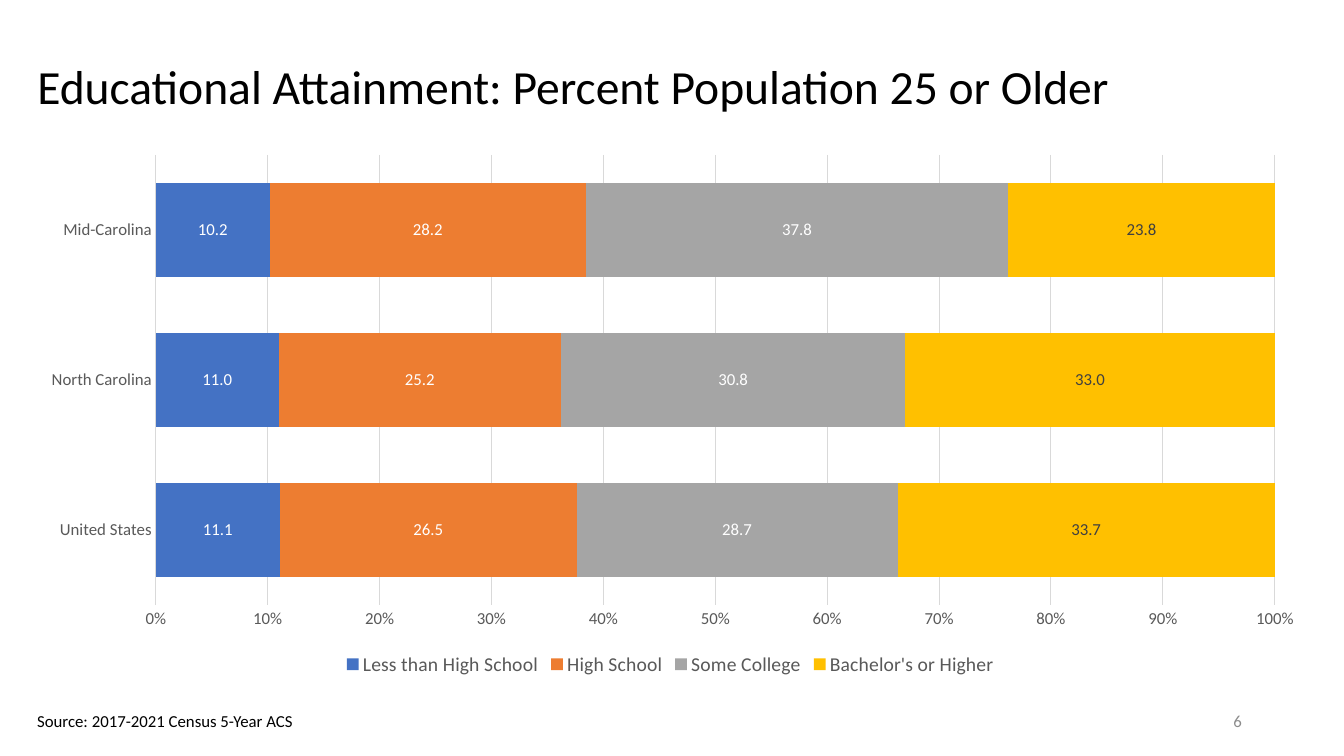
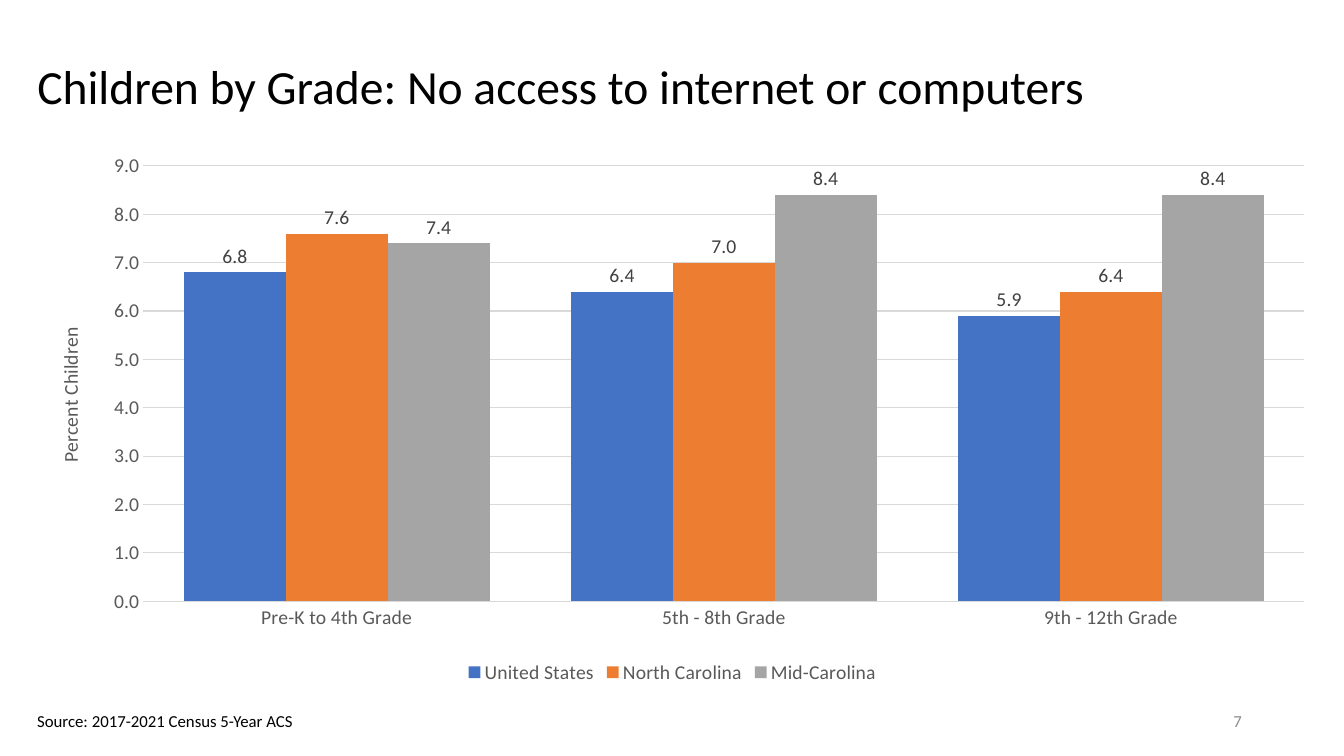
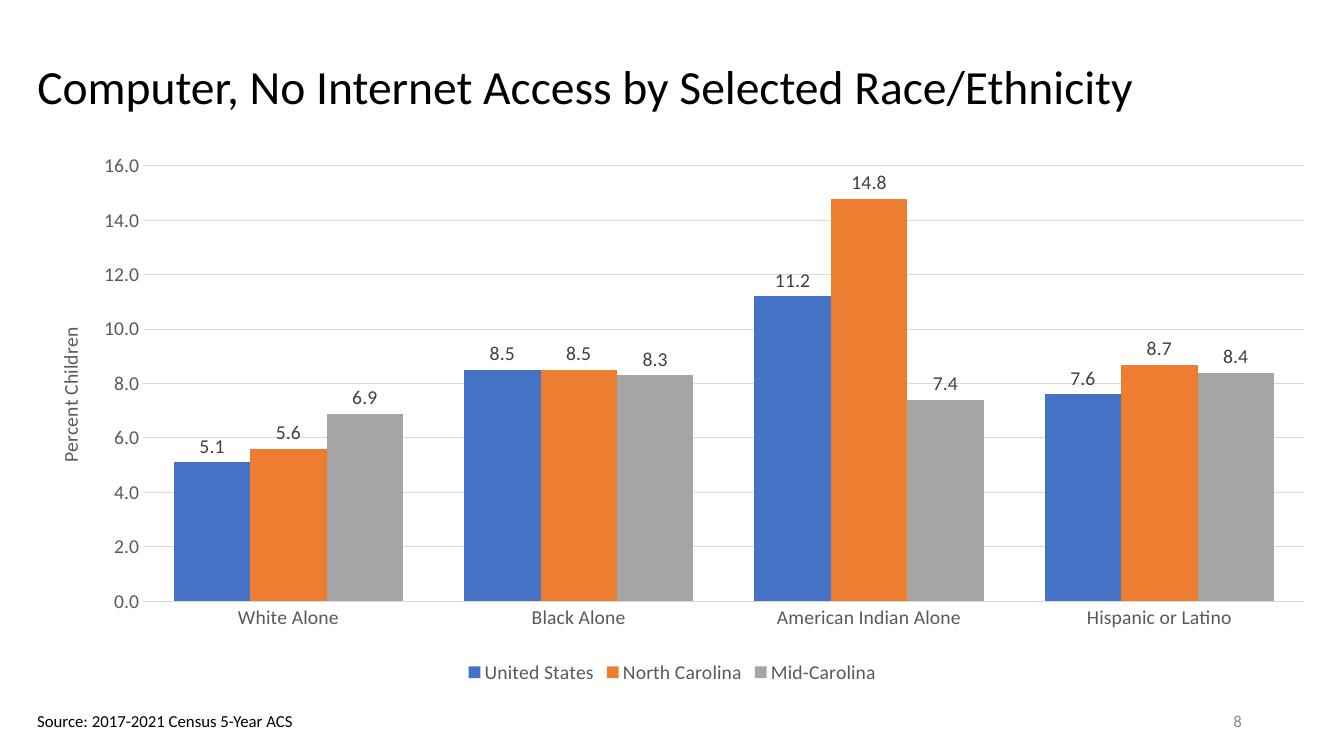
from lxml import etree
from pptx import Presentation
from pptx.chart import data as chart_data
from pptx.dml import color
from pptx.enum import chart as kinds, text
from pptx.oxml import ns
from pptx.util import Pt

FONT = "Calibri"
BLACK, GREY, DARK, PALE = "000000", "595959", "404040", "8C8C8C"
RULE, WHITE = "D9D9D9", "FFFFFF"
SERIES_COLOURS = ["4472C4", "ED7D31", "A5A5A5", "FFC000"]
DECIMAL = "#,##0.0"
REGIONS = ["United States", "North Carolina", "Mid-Carolina"]
SOURCE = "Source: 2017-2021 Census 5-Year ACS"
FIRST_NUMBER = 6

# Boxes: left, top, width, height in points
LEFT = 19.44
TITLE_BOX = (LEFT, 24.48, 918.72, 78.48)
BAR_BOX = (LEFT, 102.96, 918.72, 383.04)
COLUMN_BOX = (LEFT, 102.96, 921.6, 388.8)
SOURCE_BOX = (LEFT, 504, 200, 21.6)
NUMBER_BOX = (678.24, 500.4, 216, 28.8)


def rgb(value):
    return color.RGBColor.from_string(value)


def apply(target, **values):
    for name, value in values.items():
        setattr(target, name, value)


def style_font(font, size, colour):
    apply(font, name=FONT, size=Pt(size), bold=False)
    font.color.rgb = rgb(colour)


def style_line(line, colour):
    line.width = Pt(0.75)
    line.color.rgb = rgb(colour)


def set_layout(parent, index, **fractions):
    """Fix the place of a chart part, as fractions of the chart."""
    for old in parent.findall(ns.qn("c:layout")):
        parent.remove(old)
    layout = etree.Element(ns.qn("c:layout"))
    manual = etree.SubElement(layout, ns.qn("c:manualLayout"))
    for name, value in fractions.items():
        etree.SubElement(manual, ns.qn("c:" + name)).set("val", str(value))
    parent.insert(index, layout)


# Shared parts of every page
def add_title(page, box, words):
    title = page.shapes.title
    apply(title, **dict(zip(("left", "top", "width", "height"), map(Pt, box))))
    frame = title.text_frame
    apply(frame, text=words, word_wrap=True, auto_size=text.MSO_AUTO_SIZE.NONE,
          vertical_anchor=text.MSO_ANCHOR.MIDDLE)
    para = frame.paragraphs[0]
    apply(para, alignment=text.PP_ALIGN.LEFT, line_spacing=0.9)
    style_font(para.runs[0].font, 34, BLACK)


def add_note(page, box, words, colour, align, anchor, wrap):
    frame = page.shapes.add_textbox(*map(Pt, box)).text_frame
    apply(frame, text=words, word_wrap=wrap, vertical_anchor=anchor)
    para = frame.paragraphs[0]
    para.alignment = align
    style_font(para.runs[0].font, 12, colour)


def add_page(deck, words):
    page = deck.slides.add_slide(deck.slide_layouts[5])
    add_title(page, TITLE_BOX, words)
    number = FIRST_NUMBER + len(deck.slides) - 1
    add_note(page, NUMBER_BOX, str(number), PALE, text.PP_ALIGN.RIGHT,
             text.MSO_ANCHOR.MIDDLE, True)
    add_note(page, SOURCE_BOX, SOURCE, BLACK, text.PP_ALIGN.LEFT,
             text.MSO_ANCHOR.TOP, False)
    return page


# Charts
def add_chart(page, box, kind, categories, series, size, gap, label_place,
              label_colours, plot_area):
    data = chart_data.CategoryChartData(number_format=DECIMAL)
    data.categories = categories
    for name, values in series.items():
        data.add_series(name, values)
    chart = page.shapes.add_chart(kind, *map(Pt, box), data).chart
    apply(chart, has_title=False, has_legend=True)
    style_font(chart.font, size, BLACK)
    apply(chart.legend, position=kinds.XL_LEGEND_POSITION.BOTTOM,
          include_in_layout=False)
    style_font(chart.legend.font, 14, GREY)

    for axis in (chart.category_axis, chart.value_axis):
        apply(axis, major_tick_mark=kinds.XL_TICK_MARK.NONE,
              minor_tick_mark=kinds.XL_TICK_MARK.NONE)
        style_font(axis.tick_labels.font, size, GREY)
    style_line(chart.category_axis.format.line, RULE)
    chart.value_axis.format.line.fill.background()
    style_line(chart.value_axis.major_gridlines.format.line, RULE)

    plot = chart.plots[0]
    apply(plot, gap_width=gap, vary_by_categories=False)
    for item, fill, colour in zip(plot.series, SERIES_COLOURS, label_colours):
        item.format.fill.solid()
        item.format.fill.fore_color.rgb = rgb(fill)
        labels = item.data_labels
        apply(labels, show_value=True, number_format=DECIMAL,
              number_format_is_linked=False, position=label_place)
        style_font(labels.font, size, colour)

    set_layout(chart.element.find(".//" + ns.qn("c:plotArea")), 0,
               layoutTarget="inner", xMode="edge", yMode="edge",
               **dict(zip("xywh", plot_area)))
    return chart


def add_share_chart(page, box, categories, series):
    chart = add_chart(page, box, kinds.XL_CHART_TYPE.BAR_STACKED_100,
                      categories, series, 12, 60,
                      kinds.XL_LABEL_POSITION.CENTER,
                      [WHITE, WHITE, WHITE, DARK], (0.1, 0.02, 0.87, 0.84))
    apply(chart.value_axis.tick_labels, number_format="0%",
          number_format_is_linked=False)


def add_region_chart(page, box, categories, rows, top, step):
    chart = add_chart(page, box, kinds.XL_CHART_TYPE.COLUMN_CLUSTERED,
                      categories, dict(zip(REGIONS, rows)), 14, 80,
                      kinds.XL_LABEL_POSITION.OUTSIDE_END,
                      [DARK] * len(REGIONS), (0.09, 0.04, 0.9, 0.8))
    axis = chart.value_axis
    apply(axis, minimum_scale=0, maximum_scale=top, major_unit=step)
    apply(axis.tick_labels, number_format=DECIMAL,
          number_format_is_linked=False)
    # Upright axis title
    title = axis.axis_title
    title.text_frame.text = "Percent Children"
    style_font(title.text_frame.paragraphs[0].runs[0].font, 14, GREY)
    body = title.element.find(".//" + ns.qn("a:bodyPr"))
    body.set("rot", "-5400000")
    body.set("vert", "horz")
    set_layout(title.element, 1, xMode="edge", yMode="edge", x=0.02, y=0.33)


def main():
    deck = Presentation()
    apply(deck, slide_width=Pt(960), slide_height=Pt(540))

    page = add_page(deck, "Educational Attainment: Percent Population 25 or Older")
    add_share_chart(page, BAR_BOX, REGIONS, {
        "Less than High School": (11.1, 11, 10.2),
        "High School": (26.5, 25.2, 28.2),
        "Some College": (28.7, 30.8, 37.8),
        "Bachelor's or Higher": (33.7, 33, 23.8),
    })

    page = add_page(deck, "Children by Grade: No access to internet or computers")
    add_region_chart(
        page, COLUMN_BOX,
        ["Pre-K to 4th Grade", "5th - 8th Grade", "9th - 12th Grade"],
        [(6.8, 6.4, 5.9), (7.6, 7, 6.4), (7.4, 8.4, 8.4)], 9, 1)

    page = add_page(deck, "Computer, No Internet Access by Selected Race/Ethnicity")
    add_region_chart(
        page, COLUMN_BOX,
        ["White Alone", "Black Alone", "American Indian Alone",
         "Hispanic or Latino"],
        [(5.1, 8.5, 11.2, 7.6), (5.6, 8.5, 14.8, 8.7), (6.9, 8.3, 7.4, 8.4)],
        16, 2)

    deck.save("out.pptx")


if __name__ == "__main__":
    main()
